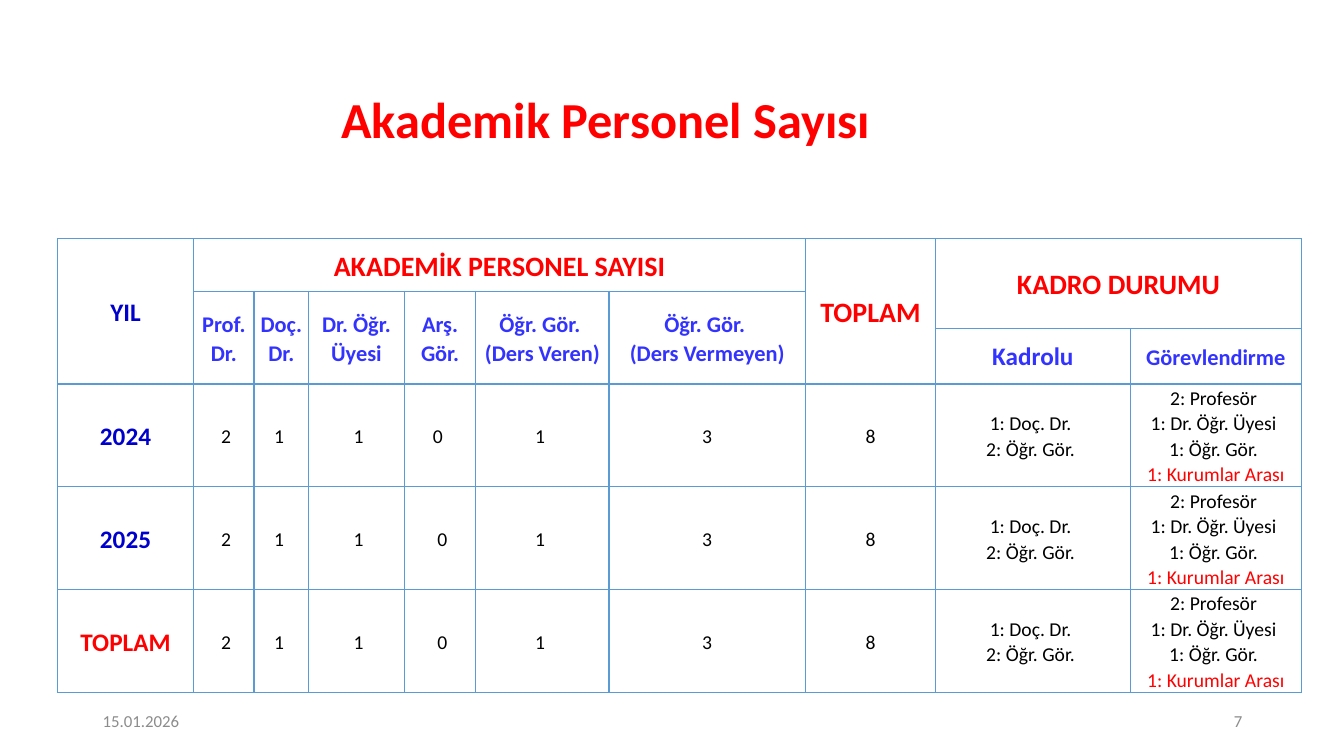
from lxml import etree
from pptx import Presentation
from pptx import util as u
from pptx.dml.color import RGBColor
from pptx.enum import text
from pptx.oxml import ns

RED = RGBColor(0xFF, 0x00, 0x00)
NAVY = RGBColor(0x00, 0x00, 0xCC)
BLUE = RGBColor(0x33, 0x33, 0xFF)
BLACK = RGBColor(0x00, 0x00, 0x00)
GRAY = RGBColor(0x8C, 0x8C, 0x8C)
BORDER = RGBColor(0x5B, 0x9B, 0xD5)
FONT = "Calibri"
CENTER = text.PP_ALIGN.CENTER

COLUMNS = [1.35, 0.6, 0.54, 0.95, 0.71, 1.32, 1.95, 1.29, 1.93, 1.7]
ROWS = [0.52, 0.37, 0.55, 1.02, 1.02, 1.02]
RANKS = ["Prof. Dr.", "Doç. Dr.", "Dr. Öğr. Üyesi", "Arş. Gör.",
         "Öğr. Gör. \n(Ders Veren)", "Öğr. Gör. \n(Ders Vermeyen)"]
YEARS = [("2024", NAVY, "0 "), ("2025", NAVY, " 0"), ("TOPLAM", RED, " 0")]
PERMANENT = "1: Doç. Dr. \n2: Öğr. Gör. "
ASSIGNED = "2: Profesör \n1: Dr. Öğr. Üyesi \n1: Öğr. Gör. \n1: Kurumlar Arası"


def write(frame, content, size, color, bold=False, align=CENTER, spacing=1.0, last_color=None):
    lines = content.split("\n")
    for index, line in enumerate(lines):
        paragraph = frame.add_paragraph() if index else frame.paragraphs[0]
        paragraph.alignment = align
        paragraph.line_spacing = spacing
        run = paragraph.add_run()
        run.text = line
        run.font.name = FONT
        run.font.size = u.Pt(size)
        run.font.bold = bold
        is_last = index == len(lines) - 1
        run.font.color.rgb = last_color if last_color and is_last else color


def add_label(slide, box, content, size, color, **style):
    frame = slide.shapes.add_textbox(*map(u.Inches, box)).text_frame
    frame.word_wrap = True
    frame.vertical_anchor = text.MSO_ANCHOR.MIDDLE
    write(frame, content, size, color, **style)


def format_cell(cell):
    cell.margin_left = cell.margin_right = cell.margin_top = u.Inches(0.01)
    cell.margin_bottom = 0
    cell.vertical_anchor = text.MSO_ANCHOR.MIDDLE
    properties = cell._tc.get_or_add_tcPr()
    for side in ("lnL", "lnR", "lnT", "lnB"):
        line = etree.SubElement(properties, ns.qn(f"a:{side}"), w=str(u.Pt(1)))
        fill = etree.SubElement(line, ns.qn("a:solidFill"))
        etree.SubElement(fill, ns.qn("a:srgbClr"), val=str(BORDER))
    cell.fill.background()


def add_staff_table(slide, left, top):
    frame = slide.shapes.add_table(
        len(ROWS), len(COLUMNS), u.Inches(left), u.Inches(top),
        u.Inches(sum(COLUMNS)), u.Inches(sum(ROWS)))
    table = frame.table
    table.first_row = table.horz_banding = False
    for column, width in zip(table.columns, COLUMNS):
        column.width = u.Inches(width)
    for row, height in zip(table.rows, ROWS):
        row.height = u.Inches(height)
    for cell in table.iter_cells():
        format_cell(cell)

    def put(row, column, content, size, color, rows=1, columns=1, spacing=1.07, **style):
        cell = table.cell(row, column)
        if rows * columns > 1:
            cell.merge(table.cell(row + rows - 1, column + columns - 1))
        write(cell.text_frame, content, size, color, spacing=spacing, **style)

    put(0, 0, "YIL", 18, NAVY, rows=3, bold=True)
    put(0, 1, "AKADEMİK PERSONEL SAYISI", 20, RED, columns=6, bold=True)
    put(0, 7, "TOPLAM", 20, RED, rows=3, bold=True)
    put(0, 8, "KADRO DURUMU", 20, RED, rows=2, columns=2, bold=True)
    for column, rank in enumerate(RANKS, 1):
        put(1, column, rank, 16, BLUE, rows=2, bold=True)
    put(2, 8, "Kadrolu", 18, BLUE, spacing=1.0, bold=True)
    put(2, 9, "Görevlendirme", 16, BLUE, bold=True)

    for row, (year, color, assistants) in enumerate(YEARS, 3):
        put(row, 0, year, 18, color, bold=True)
        counts = [" 2", "1 ", " 1", assistants, "1 ", "3", "8", PERMANENT]
        for column, content in enumerate(counts, 1):
            put(row, column, content, 14, BLACK)
        put(row, 9, ASSIGNED, 14, BLACK, last_color=RED)


def add_footer(slide, left, top, width):
    label_width, height = 3, 0.4
    add_label(slide, (left, top, label_width, height), "15.01.2026", 12, GRAY,
              align=text.PP_ALIGN.LEFT)
    add_label(slide, (left + width - label_width, top, label_width, height), "7", 12, GRAY,
              align=text.PP_ALIGN.RIGHT)


def main():
    presentation = Presentation()
    presentation.slide_width = u.Inches(13.33)
    presentation.slide_height = u.Inches(7.5)
    slide = presentation.slides.add_slide(presentation.slide_layouts[6])
    add_label(slide, (0.37, 0.83, 11.28, 0.76), "Akademik Personel Sayısı", 36, RED,
              bold=True, spacing=0.9)
    add_footer(slide, 0.92, 6.95, 11.5)
    add_staff_table(slide, 0.57, 2.37)
    presentation.save("out.pptx")


if __name__ == "__main__":
    main()
